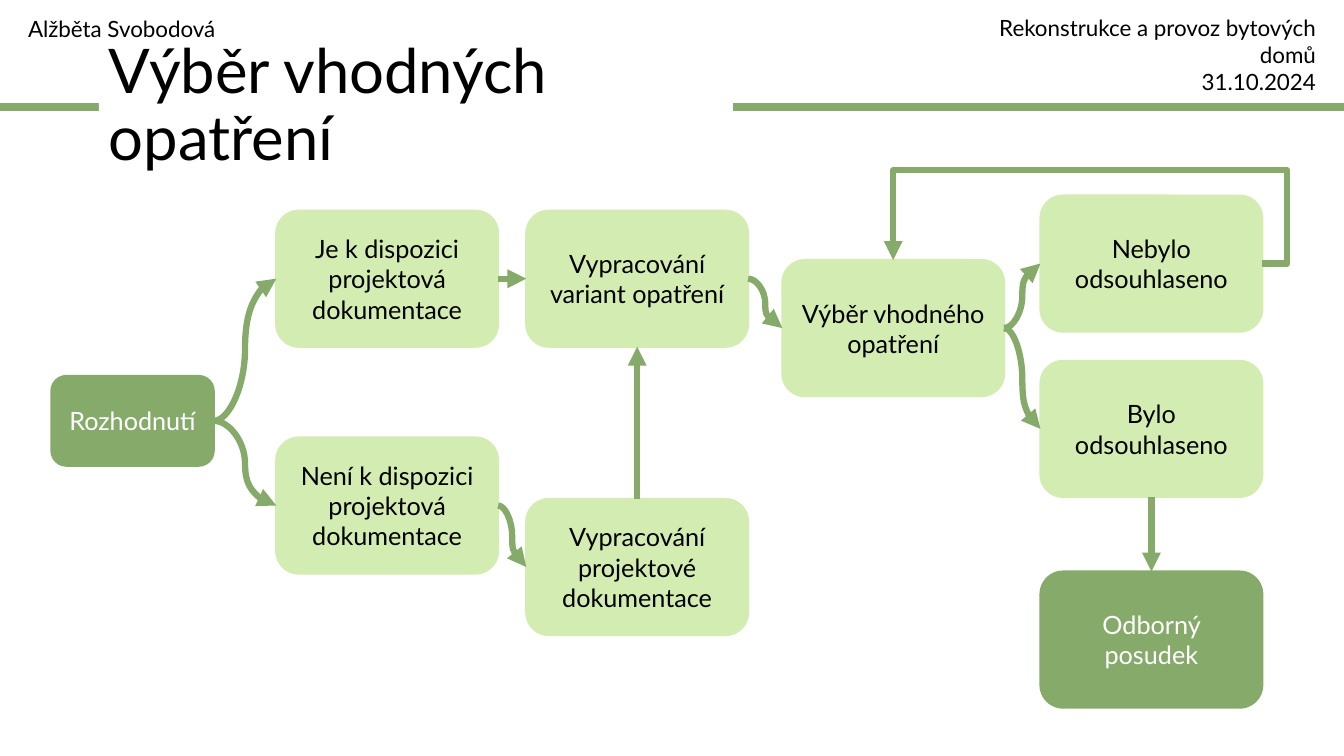
from lxml.etree import SubElement as Sub
from pptx import Presentation
from pptx.dml.color import RGBColor
from pptx.enum.shapes import MSO_CONNECTOR as Link, MSO_SHAPE as Form
from pptx.enum.text import MSO_ANCHOR as Anchor, PP_ALIGN as Align
from pptx.oxml.ns import qn
from pptx.util import Inches, Pt

GREEN = RGBColor(0x85, 0xAA, 0x6A)
LIGHT = RGBColor(0xD3, 0xEC, 0xB2)
BLACK = RGBColor(0, 0, 0)
WHITE = RGBColor(0xFF, 0xFF, 0xFF)

# Connection sites of a box
TOP, LEFT, BASE, RIGHT = range(4)


def write(frame, text, size=18, color=BLACK, align=Align.LEFT,
          anchor=Anchor.TOP, space=None):
    frame.word_wrap = True
    frame.vertical_anchor = anchor
    frame.text = text
    for para in frame.paragraphs:
        para.alignment = align
        para.line_spacing = space
        font = para.runs[0].font
        font.name = "Lato"
        font.size = Pt(size)
        font.color.rgb = color


class Board:
    """Holds the slide and its style."""

    def __init__(self, slide):
        self.shapes = slide.shapes

    def label(self, text, x, y, w, h, **style):
        box = self.shapes.add_textbox(Inches(x), Inches(y), Inches(w), Inches(h))
        write(box.text_frame, text, size=16, **style)

    def panel(self, form, x, y, w, h, fill):
        box = self.shapes.add_shape(form, Inches(x), Inches(y), Inches(w), Inches(h))
        box.shadow.inherit = False
        box.fill.solid()
        box.fill.fore_color.rgb = fill
        box.line.fill.background()
        return box

    def title(self, text, x, y, w, h):
        box = self.panel(Form.RECTANGLE, x, y, w, h, WHITE)
        write(box.text_frame, text, size=44, anchor=Anchor.MIDDLE, space=0.9)

    def step(self, text, x, y, w=2.2, h=1.35, fill=LIGHT):
        box = self.panel(Form.ROUNDED_RECTANGLE, x, y, w, h, fill)
        box.line.color.rgb = fill
        box.line.width = Pt(1.5)
        write(box.text_frame, text, color=WHITE if fill == GREEN else BLACK,
              align=Align.CENTER, anchor=Anchor.MIDDLE)
        return box

    def line(self, kind, x1=0, y1=0, x2=0, y2=0, width=4.5):
        line = self.shapes.add_connector(
            kind, Inches(x1), Inches(y1), Inches(x2), Inches(y2))
        line.line.color.rgb = GREEN
        line.line.width = Pt(width)
        Sub(line._element.spPr, qn("a:effectLst"))
        return line

    def arrow(self, start, end, out=RIGHT, into=LEFT, kind=Link.CURVE):
        line = self.line(kind)
        line.begin_connect(start, out)
        line.end_connect(end, into)
        Sub(line.line._get_or_add_ln(), qn("a:tailEnd"), type="triangle")
        return line

    def loop(self, start, end, side, top):
        """Arrow that runs out to x = side, up to y = top and back."""
        line = self.arrow(start, end, RIGHT, TOP, Link.ELBOW)
        geom = line._element.spPr.find(qn("a:prstGeom"))
        geom.set("prst", "bentConnector4")
        bends = geom.get_or_add_avLst()
        out = (line.begin_x - Inches(side)) / line.width
        rise = (line.begin_y - Inches(top)) / line.height
        for name, share in (("adj1", out), ("adj2", rise)):
            Sub(bends, qn("a:gd"), name=name, fmla=f"val {round(share * 100000)}")


def main():
    deck = Presentation()
    deck.slide_width, deck.slide_height = Inches(13.33), Inches(7.5)
    board = Board(deck.slides.add_slide(deck.slide_layouts[6]))

    # Header
    board.line(Link.STRAIGHT, 0, 1.06, 13.33, 1.06, width=6)
    board.title("Výběr vhodných opatření", 0.98, 0.52, 6.29, 1.08)
    board.label("Rekonstrukce a provoz bytových domů\n31.10.2024",
                9.23, 0.09, 3.92, 0.64, align=Align.RIGHT)
    board.label("Alžběta Svobodová", 0.18, 0.1, 3.92, 0.37)

    # Steps
    start = board.step("Rozhodnutí", 0.51, 3.73, 1.61, 0.89, fill=GREEN)
    ready = board.step("Je k dispozici projektová dokumentace", 2.74, 2.09)
    lacking = board.step("Není k dispozici projektová dokumentace", 2.74, 4.34)
    drafts = board.step("Vypracování variant opatření", 5.22, 2.09)
    papers = board.step("Vypracování projektové dokumentace", 5.22, 4.95)
    choice = board.step("Výběr vhodného opatření", 7.76, 2.58)
    denied = board.step("Nebylo odsouhlaseno", 10.32, 1.94)
    agreed = board.step("Bylo odsouhlaseno", 10.32, 3.58)
    report = board.step("Odborný posudek", 10.32, 5.67, fill=GREEN)

    # Arrows
    for tail, head in ((start, ready), (start, lacking), (lacking, papers),
                       (ready, drafts), (drafts, choice),
                       (choice, denied), (choice, agreed)):
        board.arrow(tail, head)
    board.arrow(papers, drafts, TOP, BASE, Link.STRAIGHT)
    board.arrow(agreed, report, BASE, TOP, Link.STRAIGHT)
    board.loop(denied, choice, side=12.77, top=1.69)

    deck.save("out.pptx")


if __name__ == "__main__":
    main()
